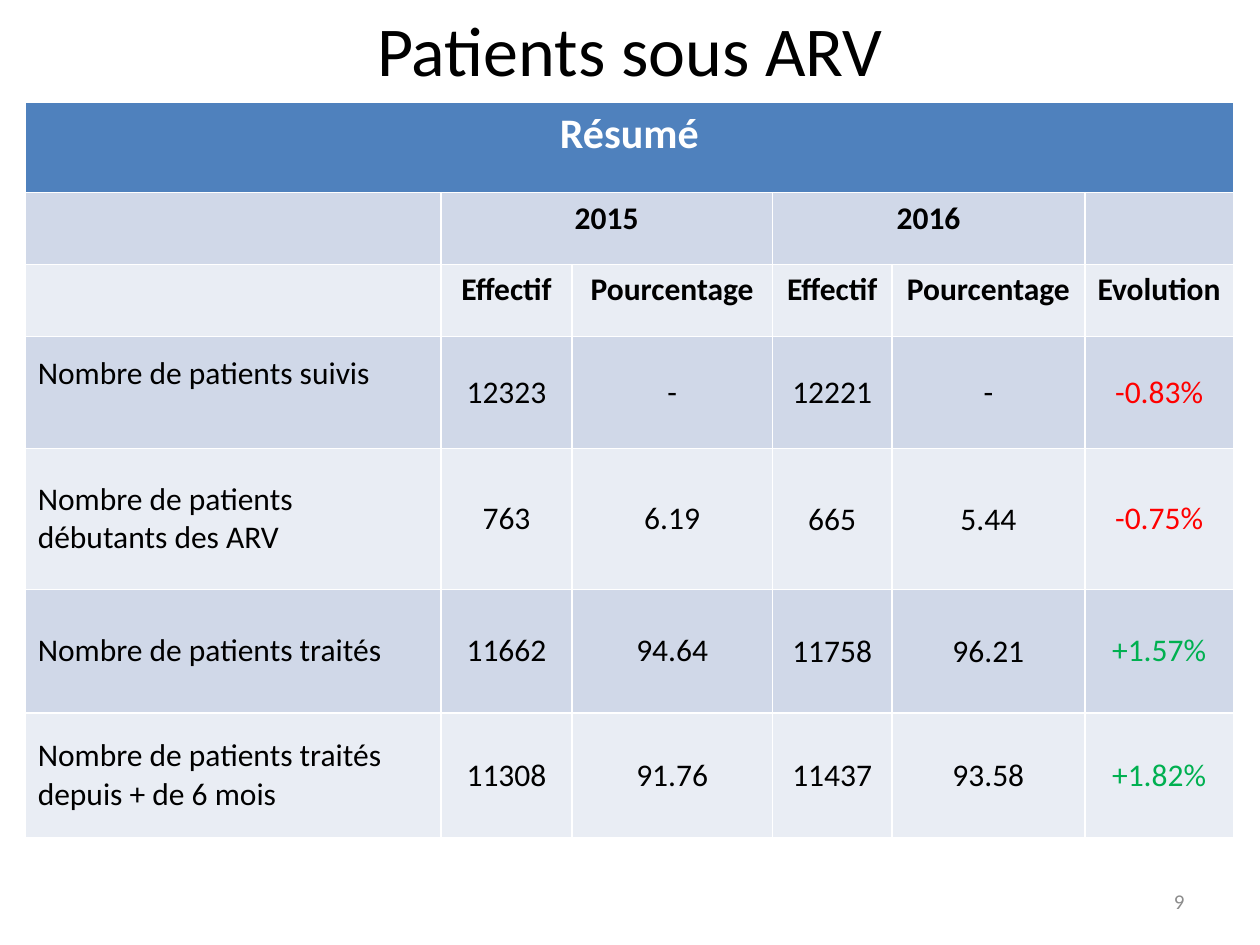
from pptx import Presentation
from pptx.dml.color import RGBColor
from pptx.enum.text import MSO_ANCHOR, PP_ALIGN
from pptx.util import Inches, Pt

LEFT, CENTER, RIGHT = PP_ALIGN.LEFT, PP_ALIGN.CENTER, PP_ALIGN.RIGHT
TOP, MIDDLE = MSO_ANCHOR.TOP, MSO_ANCHOR.MIDDLE

FONT = "Calibri"
BLACK = RGBColor(0x00, 0x00, 0x00)
WHITE = RGBColor(0xFF, 0xFF, 0xFF)
GRAY = RGBColor(0x8C, 0x8C, 0x8C)
RED = RGBColor(0xFF, 0x00, 0x00)
GREEN = RGBColor(0x00, 0xB0, 0x50)
HEADER_BLUE = RGBColor(0x4F, 0x81, 0xBD)
BANDS = (RGBColor(0xE9, 0xED, 0xF4), RGBColor(0xD0, 0xD8, 0xE8))

COLUMN_WIDTHS = (3.3, 1.04, 1.59, 0.95, 1.53, 1.18)
ROW_HEIGHTS = (0.72, 0.57, 0.57, 0.89, 1.12, 0.98, 0.99)
HEADER_ROWS = 3
ROWS = (
    ("Résumé", "", "", "", "", ""),
    ("", "2015", "", "2016", "", ""),
    ("", "Effectif", "Pourcentage", "Effectif", "Pourcentage", "Evolution"),
    ("Nombre de patients suivis", "12323", "-", "12221", "-", "-0.83%"),
    ("Nombre de patients débutants des ARV", "763", "6.19", "665", "5.44", "-0.75%"),
    ("Nombre de patients traités", "11662", "94.64", "11758", "96.21", "+1.57%"),
    ("Nombre de patients traités depuis + de 6 mois",
     "11308", "91.76", "11437", "93.58", "+1.82%"),
)
# Row, first column, last column
MERGES = ((0, 0, 5), (1, 1, 2), (1, 3, 4))


def write(text_frame, text, size, color=BLACK, bold=False, align=CENTER):
    paragraph = text_frame.paragraphs[0]
    paragraph.alignment = align
    run = paragraph.add_run()
    run.text = text
    font = run.font
    font.name, font.size, font.bold = FONT, Pt(size), bold
    font.color.rgb = color


def add_title(slide, slide_width):
    title = slide.shapes.title
    title.left, title.top = 0, 0
    title.width, title.height = slide_width, Inches(0.77)
    title.text_frame.vertical_anchor = TOP
    write(title.text_frame, "Patients sous ARV", 40)


def add_page_number(slide):
    box = slide.shapes.add_textbox(Inches(7.17), Inches(6.95), Inches(2.33), Inches(0.4))
    box.text_frame.word_wrap = True
    box.text_frame.vertical_anchor = MIDDLE
    write(box.text_frame, "9", 12, GRAY, align=RIGHT)


def text_color(row, column, text):
    if row == 0:
        return WHITE
    if row >= HEADER_ROWS and column == len(COLUMN_WIDTHS) - 1:
        return RED if text.startswith("-") else GREEN
    return BLACK


def format_cell(cell, row, column, text):
    is_header = row < HEADER_ROWS
    cell.fill.solid()
    cell.fill.fore_color.rgb = BANDS[row % 2] if row else HEADER_BLUE
    cell.vertical_anchor = TOP if is_header else MIDDLE
    if not is_header and column in (3, 4):
        cell.margin_left = cell.margin_right = cell.margin_top = Inches(0.01)
        cell.margin_bottom = 0
    if text:
        write(cell.text_frame, text, 24 if row == 0 else 18,
              text_color(row, column, text), is_header,
              LEFT if not is_header and column == 0 else CENTER)


def add_summary_table(slide):
    frame = slide.shapes.add_table(
        len(ROW_HEIGHTS), len(COLUMN_WIDTHS), Inches(0.2), Inches(0.81),
        Inches(sum(COLUMN_WIDTHS)), Inches(sum(ROW_HEIGHTS)))
    table = frame.table
    for column, width in zip(table.columns, COLUMN_WIDTHS):
        column.width = Inches(width)
    for row, height in zip(table.rows, ROW_HEIGHTS):
        row.height = Inches(height)
    for row, first, last in MERGES:
        table.cell(row, first).merge(table.cell(row, last))
    for row, texts in enumerate(ROWS):
        for column, text in enumerate(texts):
            format_cell(table.cell(row, column), row, column, text)
    # The first patient label sits half a line above the middle
    table.cell(HEADER_ROWS, 0).margin_bottom = Inches(0.35)


def main():
    presentation = Presentation()
    presentation.slide_width, presentation.slide_height = Inches(10), Inches(7.5)
    slide = presentation.slides.add_slide(presentation.slide_layouts[5])
    add_page_number(slide)
    add_title(slide, presentation.slide_width)
    add_summary_table(slide)
    presentation.save("out.pptx")


if __name__ == "__main__":
    main()
